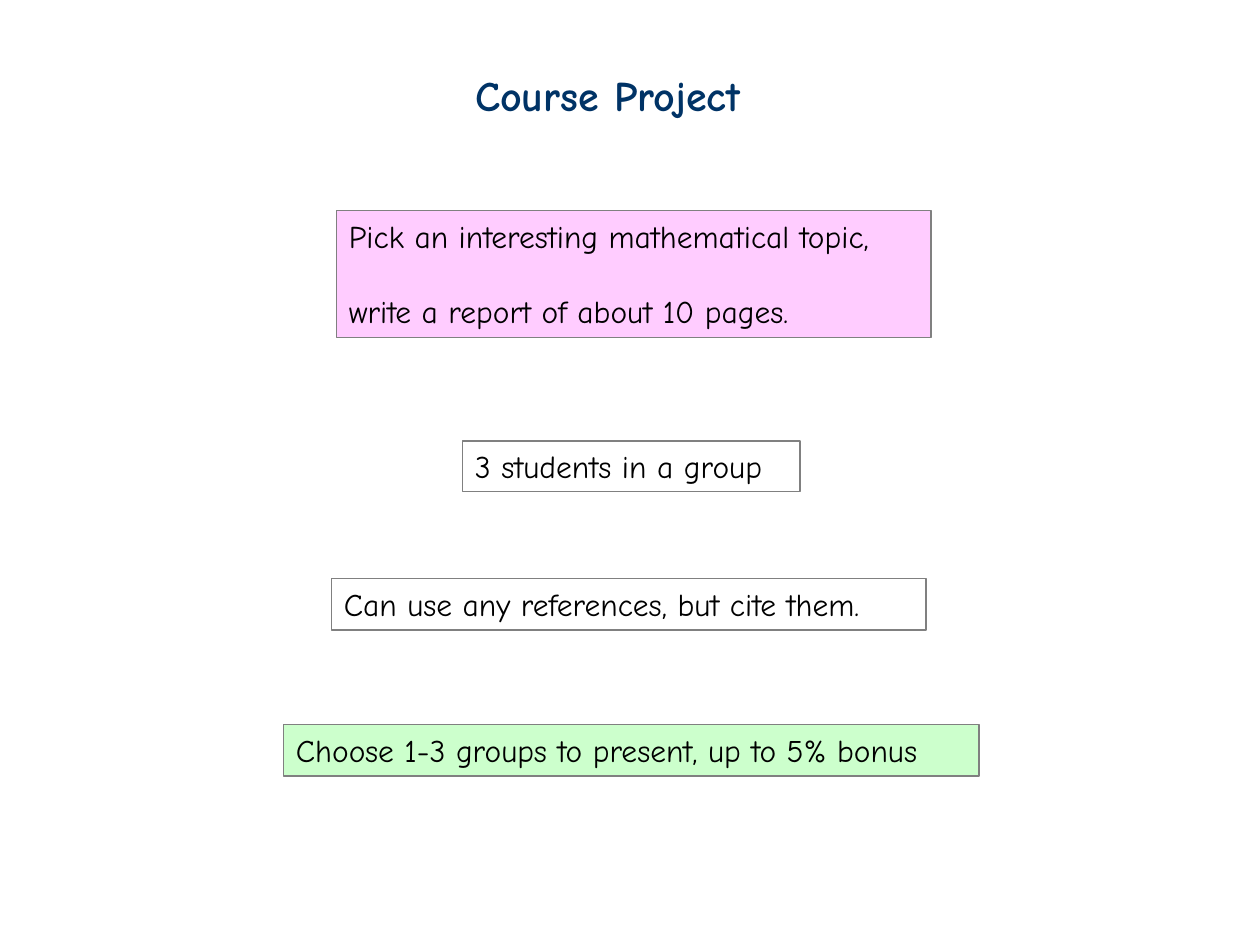
from pptx import Presentation
from pptx.dml.color import RGBColor
from pptx.enum import shapes, text
from pptx.util import Inches, Pt


def color(hex_string):
    return RGBColor.from_string(hex_string)


class SlideBuilder:
    font = "Comic Neue"
    title_color = "003366"
    body_color = "000000"
    border_color = "808080"

    def __init__(self, slide):
        self.slide = slide

    def fill_text(self, frame, content, size, hex_color, bold=False):
        frame.text = content
        frame.word_wrap = True
        frame.auto_size = text.MSO_AUTO_SIZE.NONE
        frame.vertical_anchor = text.MSO_ANCHOR.TOP
        for paragraph in frame.paragraphs:
            paragraph.alignment = text.PP_ALIGN.LEFT
            for run in paragraph.runs:
                run.font.name = self.font
                run.font.size = Pt(size)
                run.font.bold = bold
                run.font.color.rgb = color(hex_color)

    def title(self, content, left, top, width, height):
        heading = self.slide.shapes.title
        heading.left, heading.top = Inches(left), Inches(top)
        heading.width, heading.height = Inches(width), Inches(height)
        self.fill_text(heading.text_frame, content, 24, self.title_color, bold=True)

    def box(self, content, left, top, width, height, fill=None):
        panel = self.slide.shapes.add_shape(
            shapes.MSO_SHAPE.RECTANGLE,
            Inches(left), Inches(top), Inches(width), Inches(height))
        panel.shadow.inherit = False
        if fill:
            panel.fill.solid()
            panel.fill.fore_color.rgb = color(fill)
        else:
            panel.fill.background()
        panel.line.color.rgb = color(self.border_color)
        panel.line.width = Pt(0.75)
        self.fill_text(panel.text_frame, content, 18, self.body_color)
        for paragraph in panel.text_frame.paragraphs[1:]:
            paragraph.line_spacing = 2.0


def main():
    deck = Presentation()
    deck.slide_width, deck.slide_height = Inches(10), Inches(7.5)
    title_only = deck.slide_layouts[5]
    builder = SlideBuilder(deck.slides.add_slide(title_only))

    builder.title("Course Project", 3.67, 0.5, 2.57, 0.5)
    builder.box("3 students in a group", 3.67, 3.5, 2.68, 0.4)
    builder.box("Pick an interesting mathematical topic,\n"
                "write a report of about 10 pages.",
                2.67, 1.67, 4.72, 1.01, "FFCCFF")
    builder.box("Can use any references, but cite them.",
                2.63, 4.59, 4.72, 0.41)
    builder.box("Choose 1-3 groups to present, up to 5% bonus",
                2.25, 5.75, 5.52, 0.41, "CCFFCC")

    deck.save("out.pptx")


if __name__ == "__main__":
    main()
